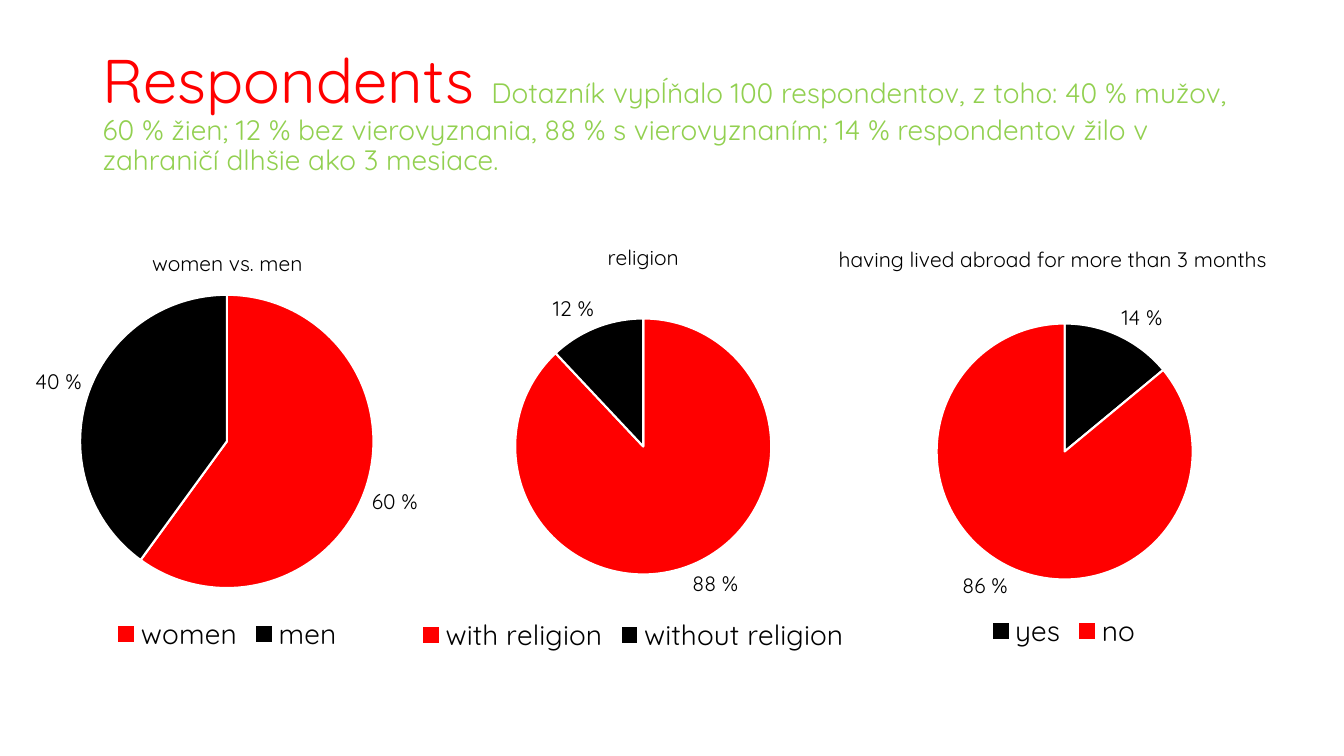
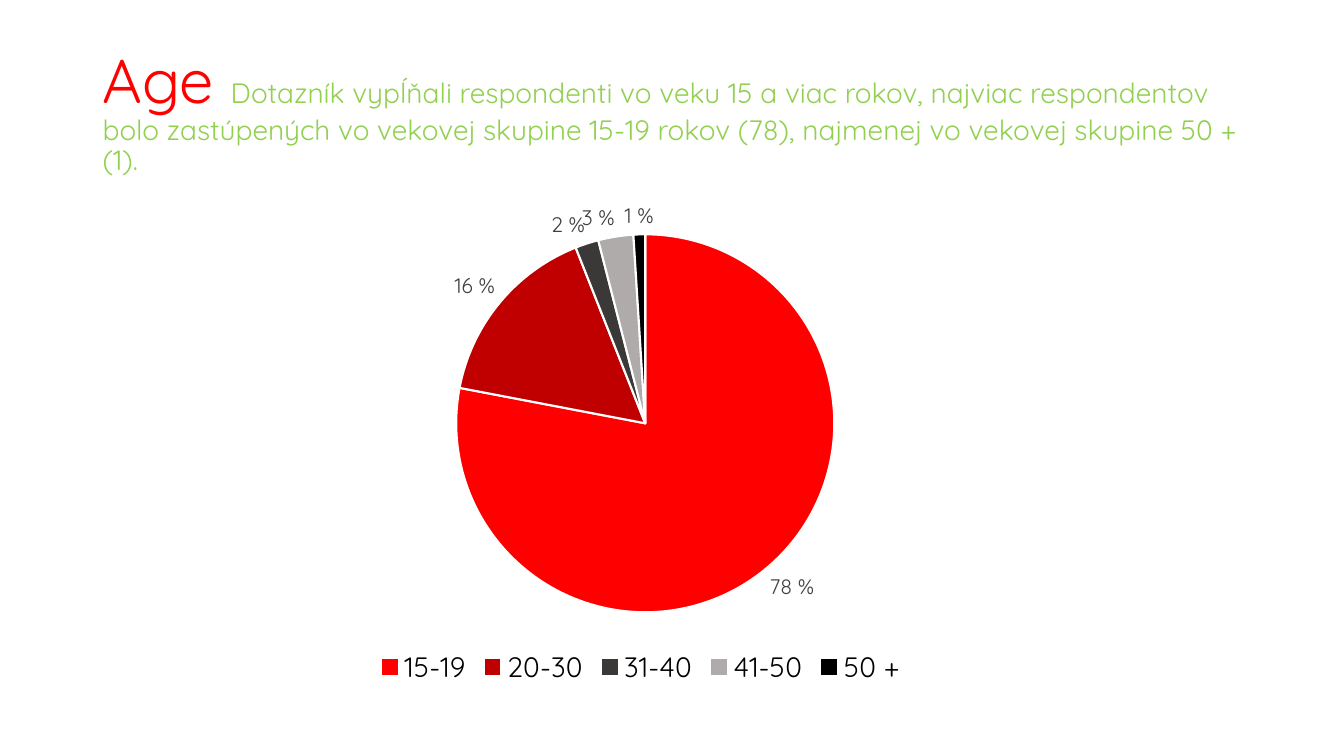
"""Build two survey slides: respondents and age, each with pie charts."""
from lxml import etree
from pptx import Presentation
from pptx.chart.data import CategoryChartData
from pptx.dml.color import RGBColor
from pptx.enum.chart import XL_CHART_TYPE, XL_LABEL_POSITION, XL_LEGEND_POSITION
from pptx.enum.text import MSO_ANCHOR
from pptx.oxml.ns import qn
from pptx.util import Inches, Pt

PIE = XL_CHART_TYPE.PIE
OUTSIDE = XL_LABEL_POSITION.OUTSIDE_END
BOTTOM = XL_LEGEND_POSITION.BOTTOM
MIDDLE = MSO_ANCHOR.MIDDLE

RED, BLACK, WHITE, GREEN = "FF0000", "000000", "FFFFFF", "92D050"
DARK_RED, CHARCOAL, SILVER, GRAY = "C00000", "3B3838", "AFABAB", "404040"
FACE = "Quicksand"
SLIDE_SIZE = 13.33, 7.5
TITLE_AREA = 0.92, 0.4, 11.5, 1.45

HEADING = {"name": FACE, "size": 44, "color": RED}
SUMMARY = {"name": FACE, "size": 20, "color": GREEN}
BASE = {"name": "Calibri", "size": 10, "color": BLACK}
CAPTION = {"name": FACE, "size": 15, "color": BLACK, "bold": False}
LEGEND = {"name": FACE, "size": 20, "color": BLACK}

SLIDES = [
    {
        "heading": "Respondents ",
        "summary": "Dotazník vypĺňalo 100 respondentov, z toho: 40 % mužov, "
                   "60 % žien; 12 % bez vierovyznania, 88 % s vierovyznaním; "
                   "14 % respondentov žilo v zahraničí dlhšie ako 3 mesiace.",
        "pies": [
            {"title": "women vs. men", "area": (-2.29, 2.28, 9.09, 4.24),
             "center": (2.25, 4.38), "diameter": 2.91,
             "slices": [("women", 60, RED), ("men", 40, BLACK)]},
            {"title": "religion", "area": (2.64, 2.22, 7.48, 4.43),
             "center": (6.38, 4.43), "diameter": 2.54, "legend_at": (4.1, 6.07),
             "slices": [("with religion", 88, RED), ("without religion", 12, BLACK)]},
            {"title": "having lived abroad for more than 3 months",
             "area": (7.23, 2.32, 6.62, 4.36),
             "center": (10.56, 4.48), "diameter": 2.54,
             "title_at": (8.28, 2.38), "legend_at": (9.75, 6.03),
             "slices": [("yes", 14, BLACK), ("no", 86, RED)]},
        ],
    },
    {
        "heading": "Age ",
        "summary": "Dotazník vypĺňali respondenti vo veku 15 a viac rokov, najviac "
                   "respondentov bolo zastúpených vo vekovej skupine 15-19 rokov (78), "
                   "najmenej vo vekovej skupine 50 + (1).",
        "pies": [
            {"area": (1.07, 1.86, 10.57, 4.99), "center": (6.4, 4.2),
             "diameter": 3.75, "label_color": GRAY,
             "slices": [("15-19", 78, RED), ("20-30", 16, DARK_RED),
                        ("31-40", 2, CHARCOAL), ("41-50", 3, SILVER),
                        ("50 +", 1, BLACK)]},
        ],
    },
]


def color(value):
    return RGBColor.from_string(value)


def style(font, formats):
    for name, value in formats.items():
        if name == "color":
            font.color.rgb = color(value)
        else:
            setattr(font, name, Pt(value) if name == "size" else value)


def place(chart, part, index, area, corner, size=None):
    """Pin one chart part at a slide position, with an optional size."""
    left, top, width, height = area
    element = chart.element.xpath(f"c:chart/c:{part}")[0]
    for old in element.findall(qn("c:layout")):
        element.remove(old)
    layout = etree.Element(qn("c:layout"))
    manual = etree.SubElement(layout, qn("c:manualLayout"))
    values = {"xMode": "edge", "yMode": "edge",
              "x": (corner[0] - left) / width, "y": (corner[1] - top) / height}
    if size:
        values = {"layoutTarget": "inner", **values,
                  "w": size / width, "h": size / height}
    for name, value in values.items():
        etree.SubElement(manual, qn(f"c:{name}")).set("val", str(value))
    element.insert(index, layout)


def add_title(page, heading, summary):
    box = page.shapes.add_textbox(*map(Inches, TITLE_AREA))
    frame = box.text_frame
    frame.word_wrap = True
    frame.vertical_anchor = MIDDLE
    para = frame.paragraphs[0]
    para.line_spacing = 0.9
    for text, formats in ((heading, HEADING), (summary, SUMMARY)):
        span = para.add_run()
        span.text = text
        style(span.font, formats)


def add_pie(page, pie):
    area, diameter = pie["area"], pie["diameter"]
    names, values, fills = zip(*pie["slices"])
    data = CategoryChartData()
    data.categories = names
    data.add_series("Series 1", values)
    chart = page.shapes.add_chart(PIE, *map(Inches, area), data).chart
    style(chart.font, BASE)

    chart.has_title = "title" in pie
    if chart.has_title:
        frame = chart.chart_title.text_frame
        frame.text = pie["title"]
        style(frame.paragraphs[0].runs[0].font, CAPTION)
    chart.has_legend = True
    chart.legend.position = BOTTOM
    chart.legend.include_in_layout = False
    style(chart.legend.font, LEGEND)

    plot = chart.plots[0]
    plot.vary_by_categories = True
    for index, fill in enumerate(fills):
        look = plot.series[0].points[index].format
        look.fill.solid()
        look.fill.fore_color.rgb = color(fill)
        look.line.color.rgb = color(WHITE)
        look.line.width = Pt(1.5)
    plot.has_data_labels = True
    labels = plot.data_labels
    labels.show_value = True
    labels.position = OUTSIDE
    labels.number_format = '0" %"'
    labels.number_format_is_linked = False
    style(labels.font, {**CAPTION, "color": pie.get("label_color", BLACK)})

    corner = [middle - diameter / 2 for middle in pie["center"]]
    place(chart, "plotArea", 0, area, corner, diameter)
    for part in ("title", "legend"):
        if f"{part}_at" in pie:
            place(chart, part, 1, area, pie[f"{part}_at"])


def main():
    deck = Presentation()
    deck.slide_width, deck.slide_height = map(Inches, SLIDE_SIZE)
    for content in SLIDES:
        page = deck.slides.add_slide(deck.slide_layouts[6])
        add_title(page, content["heading"], content["summary"])
        for pie in content["pies"]:
            add_pie(page, pie)
    deck.save("out.pptx")


if __name__ == "__main__":
    main()
